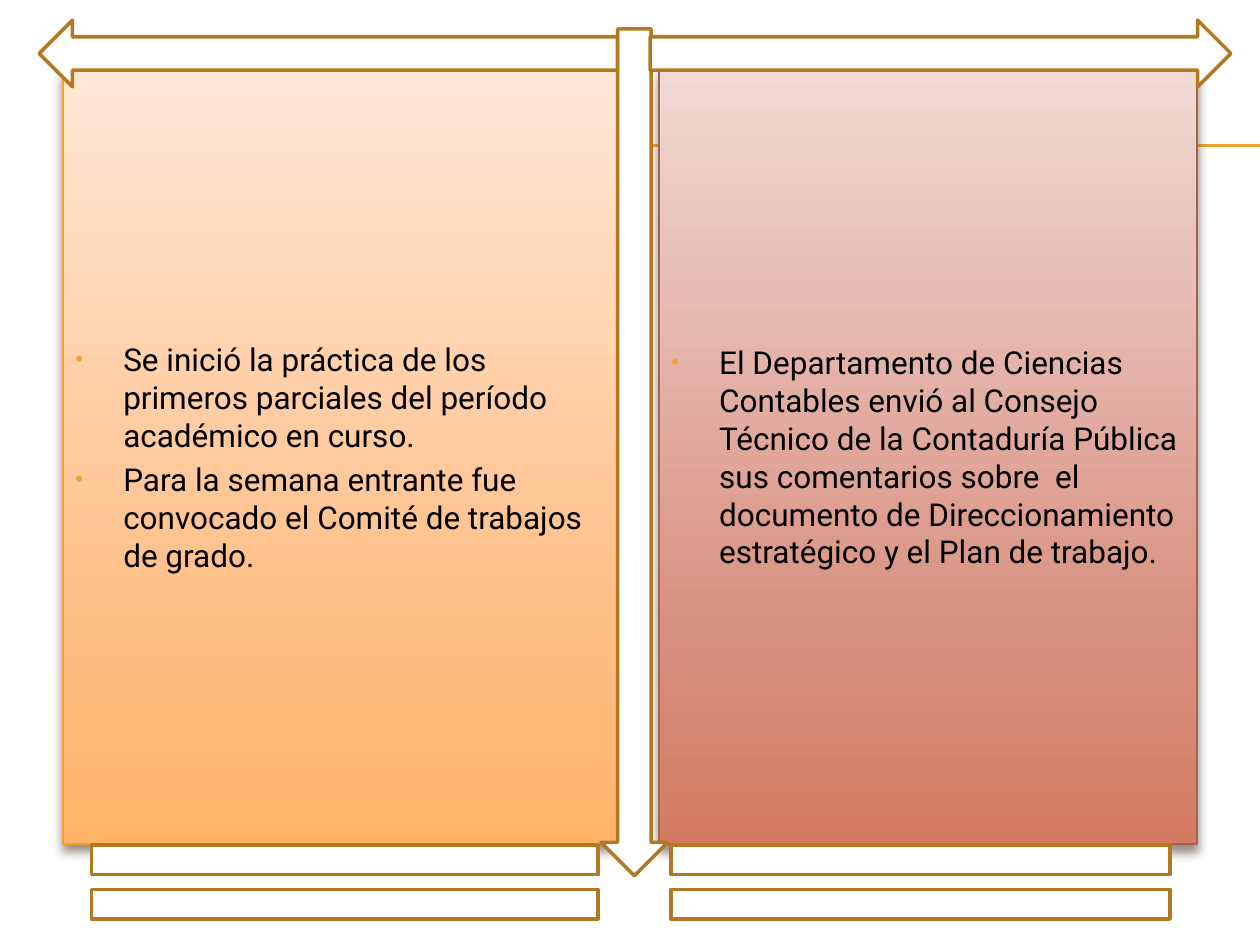
from lxml.etree import SubElement
from pptx import Presentation
from pptx.dml.color import RGBColor
from pptx.enum.shapes import MSO_CONNECTOR, MSO_SHAPE
from pptx.enum.text import MSO_ANCHOR, PP_ALIGN
from pptx.oxml.ns import qn
from pptx.util import Inches, Pt

ORANGE = "F0A22E"
BROWN = "B27822"
LEFT_NEWS = [
    "Se inició la práctica de los primeros parciales del período académico en curso.",
    "Para la semana entrante fue convocado el Comité de trabajos de grado.",
]
RIGHT_NEWS = [
    "El Departamento de Ciencias Contables envió al Consejo Técnico de la Contaduría Pública "
    "sus comentarios sobre  el documento de Direccionamiento estratégico y el Plan de trabajo.",
]


def color(value):
    return RGBColor.from_string(value)


def add_node(parent, tag, **attributes):
    return SubElement(parent, qn(tag), {key: str(value) for key, value in attributes.items()})


def add_outlined(slide, kind, box, line, width):
    shape = slide.shapes.add_shape(kind, *map(Inches, box))
    shape.shadow.inherit = False
    shape.line.color.rgb = color(line)
    shape.line.width = Pt(width)
    return shape


def add_rules(slide, left, top, width):
    for y in (top, top + 0.01):
        rule = slide.shapes.add_connector(
            MSO_CONNECTOR.STRAIGHT, Inches(left), Inches(y), Inches(left + width), Inches(y))
        rule.line.color.rgb = color(ORANGE)
        rule.line.width = Pt(0.75)
        add_node(rule._element.spPr, "a:effectLst")


def fill_gradient(panel, shades):
    panel.fill.gradient()
    panel.fill.gradient_angle = 270
    stops = panel._element.spPr.find(qn("a:gradFill")).find(qn("a:gsLst"))
    for stop in list(stops):
        stops.remove(stop)
    for position, shade in zip((0, 72, 100), shades):
        stop = add_node(stops, "a:gs", pos=position * 1000)
        add_node(stop, "a:srgbClr", val=shade)


def add_shadow(panel):
    effects = panel._element.spPr.find(qn("a:effectLst"))
    shadow = add_node(effects, "a:outerShdw", blurRad=Pt(6), dist=Pt(4),
                      dir=90 * 60000, algn="ctr", rotWithShape=0)
    tint = add_node(shadow, "a:srgbClr", val="4E3B30")
    add_node(tint, "a:alpha", val=60000)


def add_bullet(paragraph):
    properties = paragraph._p.get_or_add_pPr()
    properties.set("marL", str(Inches(0.38)))
    properties.set("indent", str(-Inches(0.38)))
    bullet_color = add_node(properties, "a:buClr")
    add_node(bullet_color, "a:srgbClr", val=ORANGE)
    add_node(properties, "a:buSzPct", val=70000)
    add_node(properties, "a:buFont", typeface="Arial")
    add_node(properties, "a:buChar", char="•")


def add_news_panel(slide, box, shades, line, news):
    panel = add_outlined(slide, MSO_SHAPE.RECTANGLE, box, line, 0.79)
    fill_gradient(panel, shades)
    add_shadow(panel)
    frame = panel.text_frame
    frame.word_wrap = True
    frame.vertical_anchor = MSO_ANCHOR.MIDDLE
    for index, item in enumerate(news):
        paragraph = frame.add_paragraph() if index else frame.paragraphs[0]
        add_bullet(paragraph)
        paragraph.text = item
        paragraph.alignment = PP_ALIGN.LEFT
        if index:
            paragraph.space_before = Pt(3.6)
        paragraph.font.name = "Roboto"
        paragraph.font.size = Pt(18)
        paragraph.font.color.rgb = color("000000")


def add_frame(slide, left, top, width, height):
    pieces = [
        (MSO_SHAPE.DOWN_ARROW, (4.46, 0.07, 0.53, 6.72)),
        (MSO_SHAPE.RIGHT_ARROW, (4.85, 0, width - 4.85, 0.53)),
        (MSO_SHAPE.LEFT_ARROW, (0, 0, 4.59, 0.53)),
        (MSO_SHAPE.MATH_EQUAL, (-0.31, height - 1, 5.47, 1)),
        (MSO_SHAPE.MATH_EQUAL, (4.3, height - 1, 5.39, 1)),
    ]
    for kind, (x, y, piece_width, piece_height) in pieces:
        piece = add_outlined(slide, kind, (left + x, top + y, piece_width, piece_height), BROWN, 2)
        piece.fill.solid()
        piece.fill.fore_color.rgb = color("FFFFFF")


def main():
    presentation = Presentation()
    presentation.slide_width = Inches(10)
    presentation.slide_height = Inches(7.5)
    slide = presentation.slides.add_slide(presentation.slide_layouts[6])
    add_rules(slide, 0.56, 1.15, 9.44)
    add_news_panel(slide, (0.5, 0.55, 4.42, 6.15), ("FFE7D7", "FFBE84", "FFB468"),
                   ORANGE, LEFT_NEWS)
    add_news_panel(slide, (5.23, 0.55, 4.27, 6.15), ("F1D9D4", "D89180", "D47A62"),
                   "A5644E", RIGHT_NEWS)
    add_frame(slide, 0.31, 0.16, 9.46, 7.34)
    presentation.save("out.pptx")


if __name__ == "__main__":
    main()
